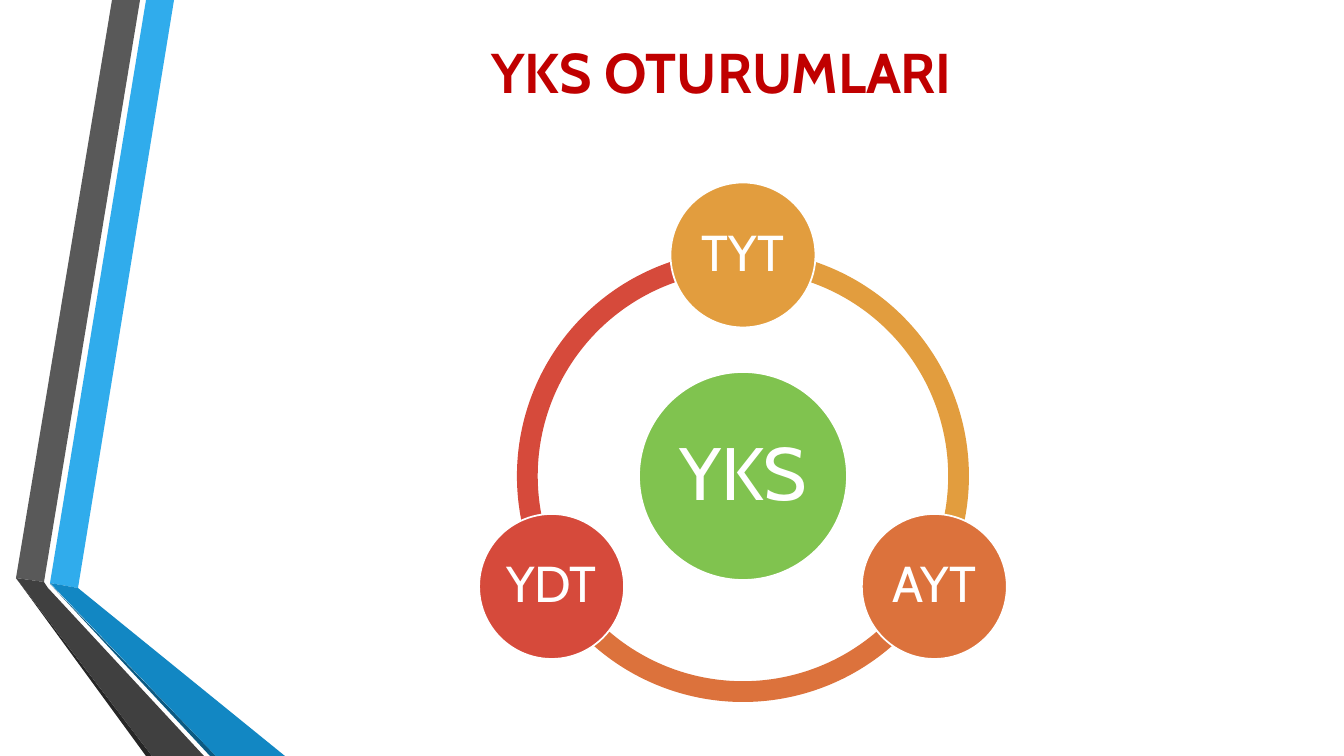
from math import cos, radians, sin

from pptx import Presentation
from pptx.dml.color import RGBColor
from pptx.enum.shapes import MSO_SHAPE as SHAPE
from pptx.enum.text import MSO_ANCHOR as ANCHOR, PP_ALIGN as ALIGN
from pptx.util import Emu, Pt

# Content
TITLE = "YKS OTURUMLARI"
HUB = ("YKS", "80C34F")
SESSIONS = [("TYT", "E29D3E"), ("AYT", "DC723C"), ("YDT", "D64A3B")]  # clockwise from top
RIBBONS = [
    ("30ACEC", [(50, 583), (78, 588), (174, 0), (146, 0)]),
    ("595959", [(140, 0), (112, 0), (16, 578), (44, 582)]),
    ("262626", [(16, 578), (146, 756), (152, 756)]),
    ("0C5A82", [(50, 584), (210, 756), (216, 756)]),
    ("1287C3", [(50, 583), (216, 756), (285, 756), (78, 588)]),
    ("404040", [(204, 756), (48, 588), (44, 582), (16, 578), (152, 756)]),
]

# Geometry in px
SCALE = 914400 / 100.8
WIDTH, HEIGHT = 1344, 756
TITLE_BOX = (169, 14, 1105, 114)
CX, CY = 743, 476
RING, HUB_SIZE, NODE_SIZE = 452, 208, 145
ORBIT = 221
BAND = 0.046  # ring thickness as a share of its diameter
FONT = "Cabin"
WHITE = "FFFFFF"


def px(n):
    return Emu(round(n * SCALE))


def rgb(value):
    return RGBColor.from_string(value)


def paint(sp, fill, line=None):
    sp.shadow.inherit = False
    sp.fill.solid()
    sp.fill.fore_color.rgb = rgb(fill)
    if line:
        sp.line.color.rgb = rgb(line)
        sp.line.width = Pt(1.25)
    else:
        sp.line.fill.background()


def write(sp, text, size, color, inset, bold=False, spacing=None):
    tf = sp.text_frame
    frame = {"word_wrap": True, "vertical_anchor": ANCHOR.MIDDLE}
    frame.update({f"margin_{side}": px(inset) for side in ("left", "top", "right", "bottom")})
    for name, value in frame.items():
        setattr(tf, name, value)
    p = tf.paragraphs[0]
    p.alignment = ALIGN.CENTER
    p.line_spacing = spacing
    r = p.add_run()
    r.text = text
    for name, value in {"name": FONT, "size": Pt(size), "bold": bold}.items():
        setattr(r.font, name, value)
    r.font.color.rgb = rgb(color)


def add_centred(shapes, kind, cx, cy, size):
    return shapes.add_shape(kind, px(cx - size / 2), px(cy - size / 2), px(size), px(size))


def add_circle(shapes, cx, cy, size, label, fill, font_size, inset):
    sp = add_centred(shapes, SHAPE.OVAL, cx, cy, size)
    paint(sp, fill, WHITE)
    write(sp, label, font_size, WHITE, inset, spacing=0.9)


def main():
    prs = Presentation()
    prs.slide_width, prs.slide_height = px(WIDTH), px(HEIGHT)
    s = prs.slides.add_slide(prs.slide_layouts[5])
    shapes = s.shapes

    # Folded ribbons on the left
    for fill, points in RIBBONS:
        builder = shapes.build_freeform(*points[0], scale=SCALE)
        builder.add_line_segments(points[1:], close=True)
        paint(builder.convert_to_shape(), fill)

    # Title
    title = shapes.title
    for name, value in zip(("left", "top", "width", "height"), TITLE_BOX):
        setattr(title, name, px(value))
    write(title, TITLE, 40, "C00000", 5, bold=True)

    # Ring: each arc runs clockwise from its session to the next
    step = 360 / len(SESSIONS)
    angles = [(270 + i * step) % 360 for i in range(len(SESSIONS))]
    for (label, fill), angle in zip(SESSIONS, angles):
        arc = add_centred(shapes, SHAPE.BLOCK_ARC, CX, CY, RING)
        arc.adjustments[0] = angle * 0.6  # 60000 units per degree, over 100000
        arc.adjustments[1] = (angle + step) % 360 * 0.6
        arc.adjustments[2] = BAND
        paint(arc, fill)

    # Hub and session circles
    add_circle(shapes, CX, CY, HUB_SIZE, *HUB, 53, 7)
    for (label, fill), angle in zip(SESSIONS, angles):
        x = CX + ORBIT * cos(radians(angle))
        y = CY + ORBIT * sin(radians(angle))
        add_circle(shapes, x, y, NODE_SIZE, label, fill, 36, 5)

    prs.save("out.pptx")


if __name__ == "__main__":
    main()
